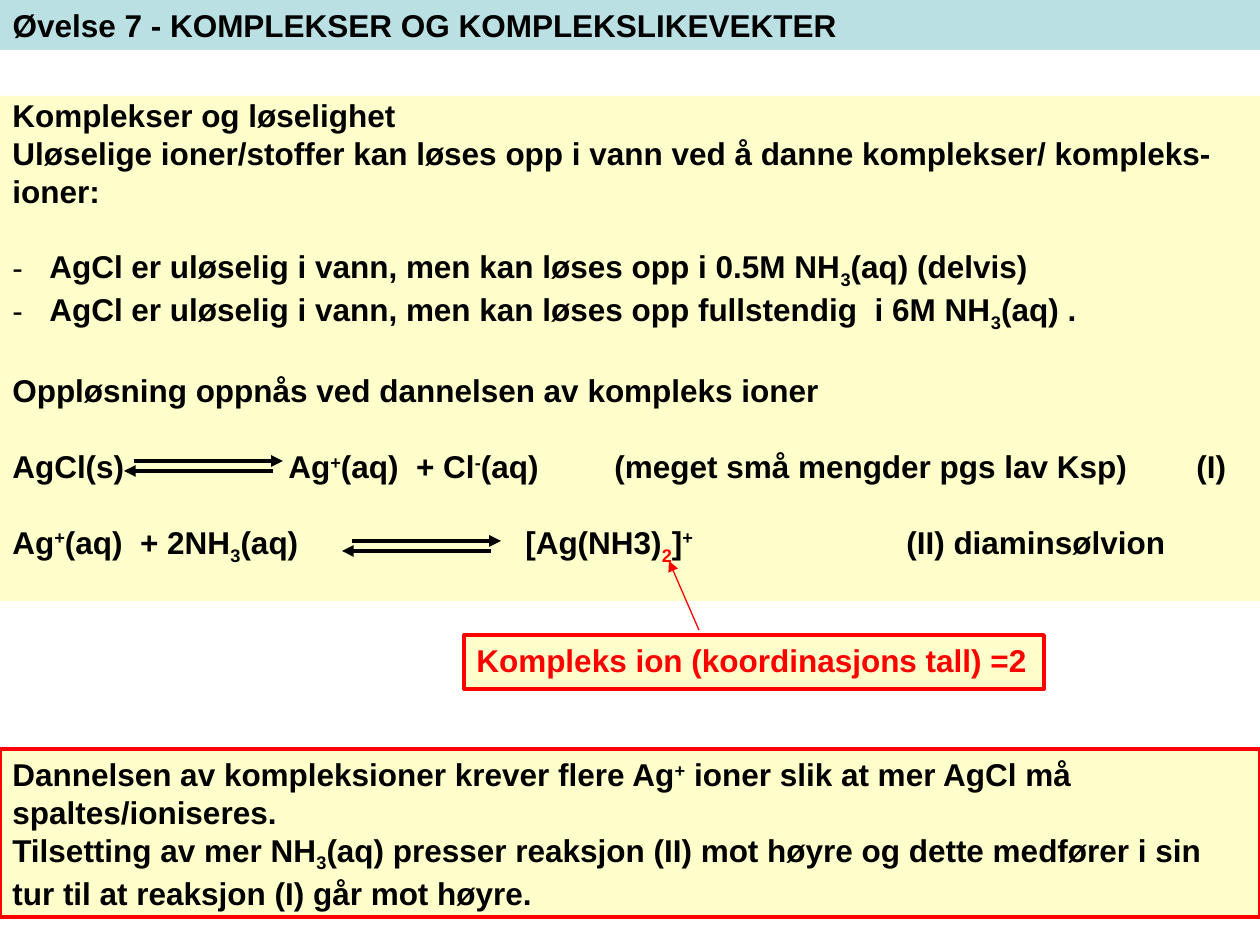
from lxml import etree
from pptx import Presentation
from pptx.dml.color import RGBColor
from pptx.enum.shapes import MSO_CONNECTOR, MSO_SHAPE
from pptx.enum.text import MSO_ANCHOR, MSO_AUTO_SIZE, PP_ALIGN
from pptx.oxml.ns import qn
from pptx.util import Emu, Pt

STRAIGHT = MSO_CONNECTOR.STRAIGHT
RECTANGLE = MSO_SHAPE.RECTANGLE
TOP = MSO_ANCHOR.TOP
MIDDLE = MSO_ANCHOR.MIDDLE
NO_AUTOFIT = MSO_AUTO_SIZE.NONE
LEFT = PP_ALIGN.LEFT

PX_PER_INCH = 126
EMU_PER_INCH = 914400
COLORS = {"header": "BBE0E3", "panel": "FFFFCC", "text": "000000", "accent": "FF0000"}
FONT = {"name": "Arial", "size": Pt(18), "bold": True}
BASELINES = {"sub": "-25000", "sup": "30000"}
BLANK_LINE = Pt(21.7)

EXPLANATION = [
    {"runs": ["Komplekser og løselighet"]},
    {"runs": ["Uløselige ioner/stoffer kan løses opp i vann ved å danne "
              "komplekser/ kompleks-ioner:"]},
    {"runs": ["AgCl er uløselig i vann, men kan løses opp i 0.5M NH", ("3", "sub"),
              "(aq) (delvis)"], "bullet": True, "gap": True},
    {"runs": ["AgCl er uløselig i vann, men kan løses opp fullstendig  i 6M NH",
              ("3", "sub"), "(aq) ."], "bullet": True},
    {"runs": ["Oppløsning oppnås ved dannelsen av kompleks ioner"], "gap": True},
    {"runs": ["AgCl(s)\tAg", ("+", "sup"), "(aq)  + Cl", ("-", "sup"),
              "(aq)\t(meget små mengder pgs lav Ksp)\t(I)"],
     "tabs": [276, 602, 1184], "gap": True},
    {"runs": ["Ag", ("+", "sup"), "(aq)  + 2NH", ("3", "sub"), "(aq)\t[Ag(NH3)",
              ("2", "sub", "accent"), "]", ("+", "sup"), "\t(II) diaminsølvion"],
     "tabs": [513, 894], "gap": True},
]
CONCLUSION = [
    {"runs": ["Dannelsen av kompleksioner krever flere Ag", ("+", "sup"),
              " ioner slik at mer AgCl må spaltes/ioniseres."]},
    {"runs": ["Tilsetting av mer NH", ("3", "sub"),
              "(aq) presser reaksjon (II) mot høyre og dette medfører i sin tur til at "
              "reaksjon (I) går mot høyre."]},
]


def px(length):
    return Emu(round(length * EMU_PER_INCH / PX_PER_INCH))


def color(name):
    return RGBColor.from_string(COLORS[name])


def add_span(para, text, base=None, color_name="text"):
    span = para.add_run()
    span.text = text
    for name, value in FONT.items():
        setattr(span.font, name, value)
    span.font.color.rgb = color(color_name)
    if base:
        span.font._element.set("baseline", BASELINES[base])


def add_bullet(properties):
    properties.set("marL", str(px(37)))
    properties.set("indent", str(-px(37)))
    etree.SubElement(properties, qn("a:buFont")).set("typeface", "Arial")
    etree.SubElement(properties, qn("a:buChar")).set("char", "-")


def add_tabs(properties, positions):
    stops = etree.SubElement(properties, qn("a:tabLst"))
    for position in positions:
        stop = etree.SubElement(stops, qn("a:tab"))
        stop.set("pos", str(px(position)))
        stop.set("algn", "l")


def write_text(box, paragraphs, anchor=TOP, wrap=True, margin_top=6):
    frame = box.text_frame
    layout = {"auto_size": NO_AUTOFIT, "word_wrap": wrap, "vertical_anchor": anchor,
              "margin_top": px(margin_top)}
    for name, value in layout.items():
        setattr(frame, name, value)
    for index, content in enumerate(paragraphs):
        para = frame.add_paragraph() if index else frame.paragraphs[0]
        para.alignment = LEFT
        para.space_before = BLANK_LINE if content.get("gap") else Pt(0)
        properties = para._p.get_or_add_pPr()
        if content.get("bullet"):
            add_bullet(properties)
        if "tabs" in content:
            add_tabs(properties, content["tabs"])
        for run in content["runs"]:
            add_span(para, *((run,) if isinstance(run, str) else run))


def format_title(title):
    bounds = {"left": 0, "top": 0, "width": 1260, "height": 50}
    for name, value in bounds.items():
        setattr(title, name, px(value))
    title.fill.solid()
    title.fill.fore_color.rgb = color("header")
    write_text(title, [{"runs": ["Øvelse 7 - KOMPLEKSER OG KOMPLEKSLIKEVEKTER"]}], MIDDLE)


def add_panel(page, bounds, paragraphs, outlined=True, **layout):
    box = page.shapes.add_shape(RECTANGLE, *map(px, bounds))
    box.shadow.inherit = False
    box.fill.solid()
    box.fill.fore_color.rgb = color("panel")
    if outlined:
        box.line.color.rgb = color("accent")
        box.line.width = Pt(2.25)
    else:
        box.line.fill.background()
    write_text(box, paragraphs, **layout)


def add_arrow(page, start, end, color_name="text", width=2.25):
    arrow = page.shapes.add_connector(STRAIGHT, *map(px, start + end))
    arrow.line.color.rgb = color(color_name)
    arrow.line.width = Pt(width)
    tail = etree.SubElement(arrow.line._get_or_add_ln(), qn("a:tailEnd"))
    tail.set("type", "triangle")
    etree.SubElement(arrow._element.spPr, qn("a:effectLst"))


def add_equilibrium(page, left, top):
    add_arrow(page, (left + 10, top), (left + 159, top))
    add_arrow(page, (left + 149, top + 10), (left, top + 10))


def main():
    deck = Presentation()
    deck.slide_width, deck.slide_height = px(1260), px(945)
    page = deck.slides.add_slide(deck.slide_layouts[5])
    format_title(page.shapes.title)
    add_panel(page, (0, 96, 1260, 505), EXPLANATION, outlined=False, margin_top=0)
    add_equilibrium(page, 124, 461)
    add_equilibrium(page, 342, 541)
    add_panel(page, (464, 635, 580, 54),
              [{"runs": [("Kompleks ion (koordinasjons tall) =2", None, "accent")]}],
              wrap=False)
    add_arrow(page, (699, 630), (669, 561), "accent", 0.75)
    add_panel(page, (0, 749, 1260, 168), CONCLUSION)
    deck.save("out.pptx")


if __name__ == "__main__":
    main()
